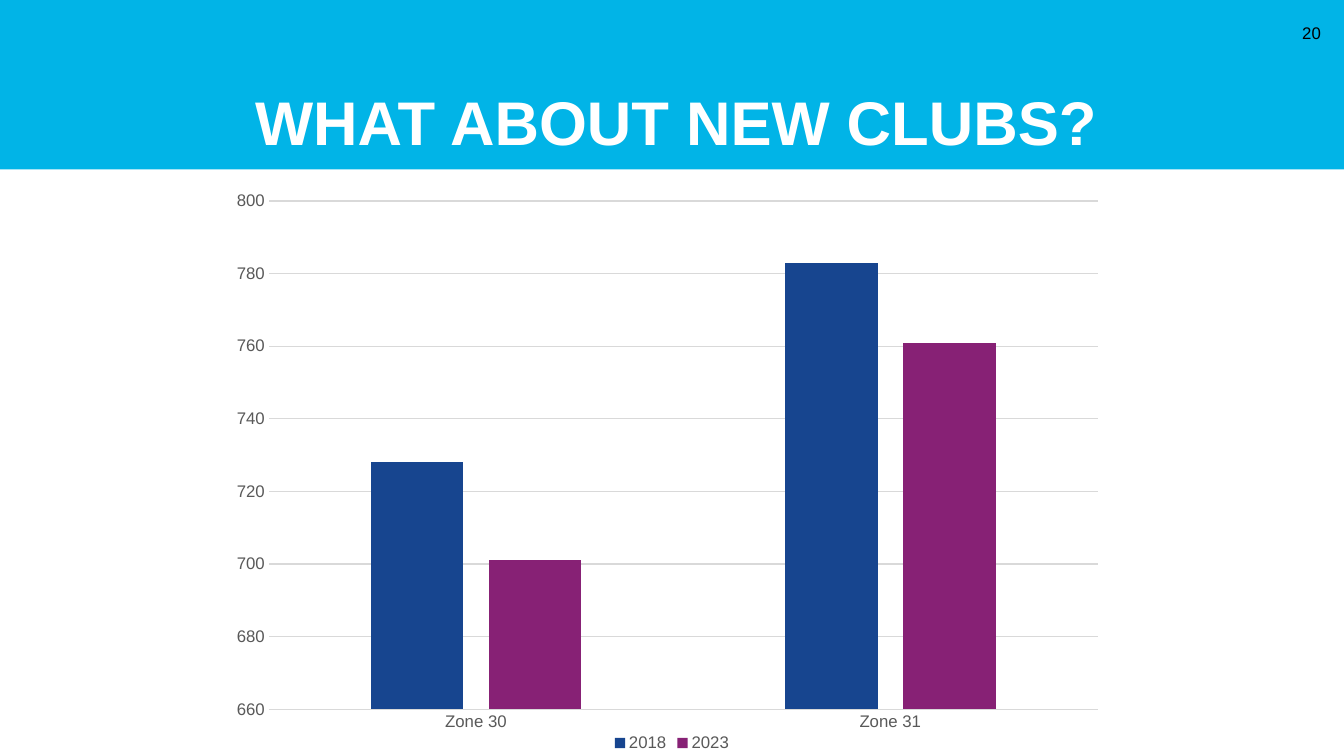
from dataclasses import dataclass

import lxml.etree
import pptx
import pptx.chart.data
import pptx.dml.color
import pptx.enum.chart
import pptx.enum.shapes
import pptx.enum.text
import pptx.oxml.ns
import pptx.util

SLIDE_WIDTH = pptx.util.Inches(13.33)
SLIDE_HEIGHT = pptx.util.Inches(7.5)


@dataclass(frozen=True)
class Theme:
    font: str = "Arial"
    band: str = "01B4E7"
    title: str = "FFFFFF"
    number: str = "000000"
    label: str = "595959"
    grid: str = "D9D9D9"
    title_size: float = 44
    small_size: float = 12
    line_width: float = 0.75


@dataclass(frozen=True)
class Area:
    left: float
    top: float
    width: float
    height: float

    def lengths(self) -> tuple[int, int, int, int]:
        return (
            round(self.left * SLIDE_WIDTH),
            round(self.top * SLIDE_HEIGHT),
            round(self.width * SLIDE_WIDTH),
            round(self.height * SLIDE_HEIGHT),
        )


@dataclass(frozen=True)
class Label:
    text: str
    area: Area
    size: float
    color: str
    bold: bool
    align: pptx.enum.text.PP_ALIGN
    anchor: pptx.enum.text.MSO_ANCHOR
    top_inset: float
    bottom_inset: float
    line_spacing: float


@dataclass(frozen=True)
class Year:
    name: str
    clubs: tuple[int, ...]
    color: str


THEME = Theme()
BAND = Area(0, 0, 1, 0.224)
CHART = Area(1 / 6, 0.209, 2 / 3, 0.791)
PLOT = {"x": 0.05, "y": 0.072, "w": 0.925, "h": 0.85}
ZONES = ("Zone 30", "Zone 31")
YEARS = (
    Year("2018", (728, 783), "17458F"),
    Year("2023", (701, 761), "872175"),
)
LABELS = (
    Label("WHAT ABOUT NEW CLUBS?", Area(0.0315, 0, 0.9437, 0.224),
          THEME.title_size, THEME.title, True, pptx.enum.text.PP_ALIGN.CENTER,
          pptx.enum.text.MSO_ANCHOR.BOTTOM, 0, 0.1, 0.9),
    Label("20", Area(0.9557, 0.0173, 0.0345, 0.0533),
          THEME.small_size, THEME.number, False, pptx.enum.text.PP_ALIGN.RIGHT,
          pptx.enum.text.MSO_ANCHOR.MIDDLE, 0.05, 0.05, 1),
)


def rgb(color: str) -> pptx.dml.color.RGBColor:
    return pptx.dml.color.RGBColor.from_string(color)


def style_font(font, size: float, color: str, bold: bool = False) -> None:
    font.name = THEME.font
    font.size = pptx.util.Pt(size)
    font.bold = bold
    font.color.rgb = rgb(color)


def style_line(line) -> None:
    line.color.rgb = rgb(THEME.grid)
    line.width = pptx.util.Pt(THEME.line_width)


def draw_band(page) -> None:
    band = page.shapes.add_shape(
        pptx.enum.shapes.MSO_SHAPE.RECTANGLE, *BAND.lengths())
    band.shadow.inherit = False
    band.fill.solid()
    band.fill.fore_color.rgb = rgb(THEME.band)
    band.line.fill.background()


def draw_label(page, label: Label) -> None:
    box = page.shapes.add_textbox(*label.area.lengths())
    frame = box.text_frame
    frame.word_wrap = True
    frame.vertical_anchor = label.anchor
    frame.margin_top = pptx.util.Inches(label.top_inset)
    frame.margin_bottom = pptx.util.Inches(label.bottom_inset)
    para = frame.paragraphs[0]
    para.text = label.text
    para.alignment = label.align
    para.line_spacing = label.line_spacing
    style_font(para.font, label.size, label.color, label.bold)


def place_plot(chart) -> None:
    qn = pptx.oxml.ns.qn
    plot_area = chart.element.find(".//" + qn("c:plotArea"))
    for former in plot_area.findall(qn("c:layout")):
        plot_area.remove(former)
    layout = lxml.etree.Element(qn("c:layout"))
    manual = lxml.etree.SubElement(layout, qn("c:manualLayout"))
    settings = {"layoutTarget": "inner", "xMode": "edge", "yMode": "edge", **PLOT}
    for tag, value in settings.items():
        lxml.etree.SubElement(manual, qn(f"c:{tag}"), val=str(value))
    plot_area.insert(0, layout)


def draw_chart(page) -> None:
    data = pptx.chart.data.CategoryChartData()
    data.categories = ZONES
    for year in YEARS:
        data.add_series(year.name, year.clubs)
    chart = page.shapes.add_chart(
        pptx.enum.chart.XL_CHART_TYPE.COLUMN_CLUSTERED, *CHART.lengths(), data).chart
    style_font(chart.font, THEME.small_size, THEME.label)
    chart.has_title = False
    chart.has_legend = True
    chart.legend.position = pptx.enum.chart.XL_LEGEND_POSITION.BOTTOM
    chart.legend.include_in_layout = False
    style_font(chart.legend.font, THEME.small_size, THEME.label)

    plot = chart.plots[0]
    plot.vary_by_categories = False
    plot.gap_width = 219
    plot.overlap = -27
    for year, series in zip(YEARS, plot.series):
        series.format.fill.solid()
        series.format.fill.fore_color.rgb = rgb(year.color)

    for axis in (chart.category_axis, chart.value_axis):
        axis.major_tick_mark = pptx.enum.chart.XL_TICK_MARK.NONE
        axis.minor_tick_mark = pptx.enum.chart.XL_TICK_MARK.NONE
        style_font(axis.tick_labels.font, THEME.small_size, THEME.label)
    style_line(chart.category_axis.format.line)
    values = chart.value_axis
    values.minimum_scale = 660
    values.maximum_scale = 800
    values.major_unit = 20
    values.format.line.fill.background()
    values.has_major_gridlines = True
    style_line(values.major_gridlines.format.line)
    place_plot(chart)


def main() -> None:
    deck = pptx.Presentation()
    deck.slide_width = SLIDE_WIDTH
    deck.slide_height = SLIDE_HEIGHT
    page = deck.slides.add_slide(deck.slide_layouts[6])
    draw_band(page)
    draw_chart(page)
    for label in LABELS:
        draw_label(page, label)
    deck.save("out.pptx")


if __name__ == "__main__":
    main()
